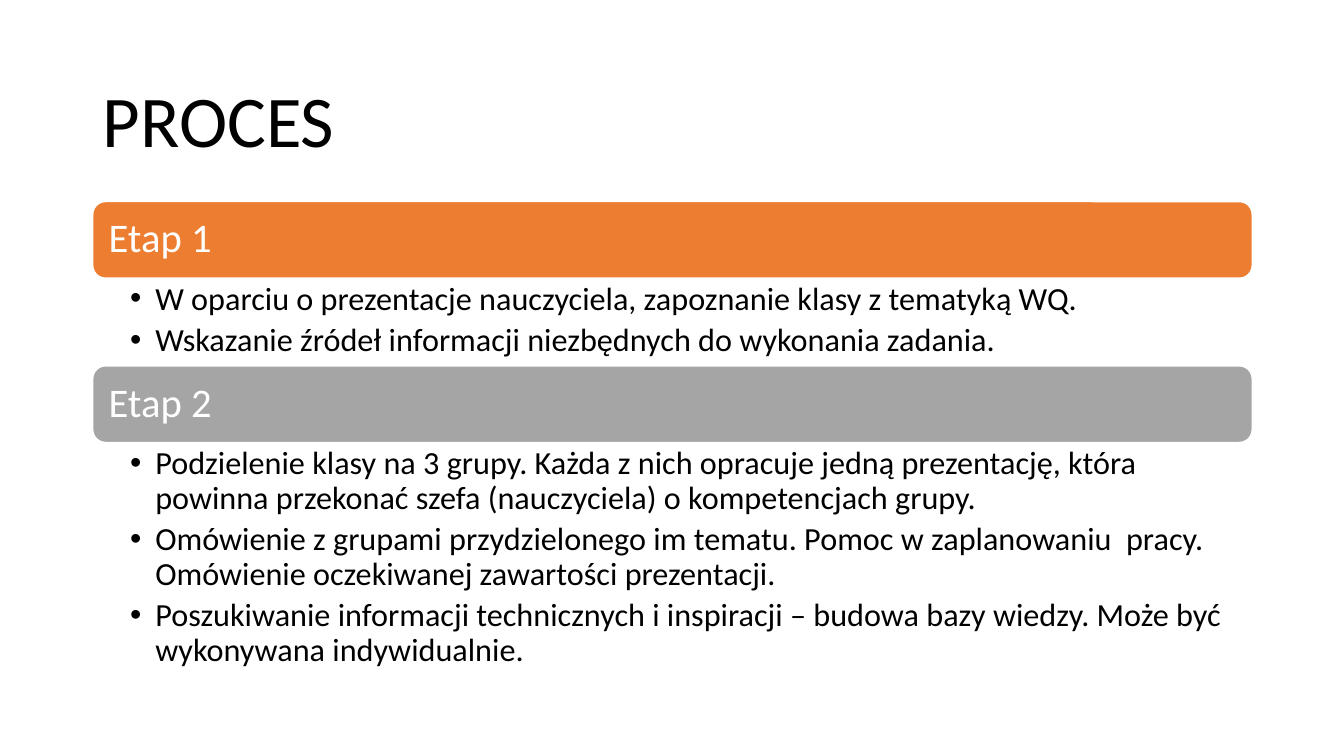
from dataclasses import dataclass

from pptx import Presentation
from pptx.dml.color import RGBColor
from pptx.enum.shapes import MSO_SHAPE
from pptx.enum.text import MSO_ANCHOR, MSO_AUTO_SIZE, PP_ALIGN
from pptx.util import Inches, Pt

ROUND = MSO_SHAPE.ROUNDED_RECTANGLE
TOP, MIDDLE = MSO_ANCHOR.TOP, MSO_ANCHOR.MIDDLE
LEFT = PP_ALIGN.LEFT
NO_FIT = MSO_AUTO_SIZE.NONE


@dataclass(frozen=True)
class Theme:
    font: str = "Calibri"
    black: str = "000000"
    white: str = "FFFFFF"
    orange: str = "ED7D31"
    gray: str = "A5A5A5"
    title: float = 52
    head: float = 29
    body: float = 23


THEME = Theme()
X, WIDTH = 0.92, 11.5
BAR = 0.76
STAGES = [
    ("Etap 1", THEME.orange, 0.87, [
        "W oparciu o prezentacje nauczyciela, zapoznanie klasy z tematyką WQ.",
        "Wskazanie źródeł informacji niezbędnych do wykonania zadania.",
    ]),
    ("Etap 2", THEME.gray, 2.36, [
        "Podzielenie klasy na 3 grupy. Każda z nich opracuje jedną prezentację, "
        "która powinna przekonać szefa (nauczyciela) o kompetencjach grupy.",
        "Omówienie z grupami przydzielonego im tematu. Pomoc w zaplanowaniu  pracy. "
        "Omówienie oczekiwanej zawartości prezentacji.",
        "Poszukiwanie informacji technicznych i inspiracji – budowa bazy wiedzy. "
        "Może być wykonywana indywidualnie.",
    ]),
]


def place(shape, x, y, w, h):
    shape.left, shape.top = Inches(x), Inches(y)
    shape.width, shape.height = Inches(w), Inches(h)


def write(shape, lines, size, color=THEME.black, anchor=MIDDLE,
          inset=(0.1, 0.05, 0.1, 0.05), after=0, hang=0):
    """Fill a shape with paragraphs; a hang above zero indents for bullets."""
    frame = shape.text_frame
    frame.text = "\n".join(lines)
    frame.word_wrap = True
    frame.auto_size = NO_FIT
    frame.vertical_anchor = anchor
    (frame.margin_left, frame.margin_top,
     frame.margin_right, frame.margin_bottom) = map(Inches, inset)
    for para in frame.paragraphs:
        para.alignment = LEFT
        para.line_spacing = 0.9
        para.space_before = Pt(0)
        para.space_after = Pt(after)
        if hang:
            props = para._p.get_or_add_pPr()
            props.set("marL", str(Inches(hang)))
            props.set("indent", str(-Inches(hang)))
        font = para.runs[0].font
        font.name, font.size = THEME.font, Pt(size)
        font.color.rgb = RGBColor.from_string(color)


def add_bar(slide, text, color, x, y, w, h):
    bar = slide.shapes.add_shape(ROUND, Inches(x), Inches(y), Inches(w), Inches(h))
    bar.shadow.inherit = False
    bar.fill.solid()
    bar.fill.fore_color.rgb = RGBColor.from_string(color)
    bar.line.color.rgb = RGBColor.from_string(THEME.white)
    bar.line.width = Pt(1)
    write(bar, [text], THEME.head, THEME.white, inset=(0.12,) * 4)


def add_stage(slide, body, stage, x, y, w):
    """Place a bar with its list below and return the bottom edge."""
    name, color, height, items = stage
    add_bar(slide, name, color, x, y, w, BAR)
    place(body, x, y + BAR, w, height)
    write(body, items, THEME.body, anchor=TOP,
          inset=(0.37, 0.04, 0.23, 0.04), after=4.6, hang=0.25)
    return y + BAR + height


def main():
    deck = Presentation()
    deck.slide_width, deck.slide_height = Inches(13.33), Inches(7.5)
    slide = deck.slides.add_slide(deck.slide_layouts.get_by_name("Two Content"))
    title, *bodies = list(slide.placeholders)[:3]
    place(title, X, 0.61, WIDTH, 1.24)
    write(title, ["PROCES"], THEME.title, after=6)
    y = 2
    for body, stage in zip(bodies, STAGES):
        y = add_stage(slide, body, stage, X, y, WIDTH)
    deck.save("out.pptx")


if __name__ == "__main__":
    main()
